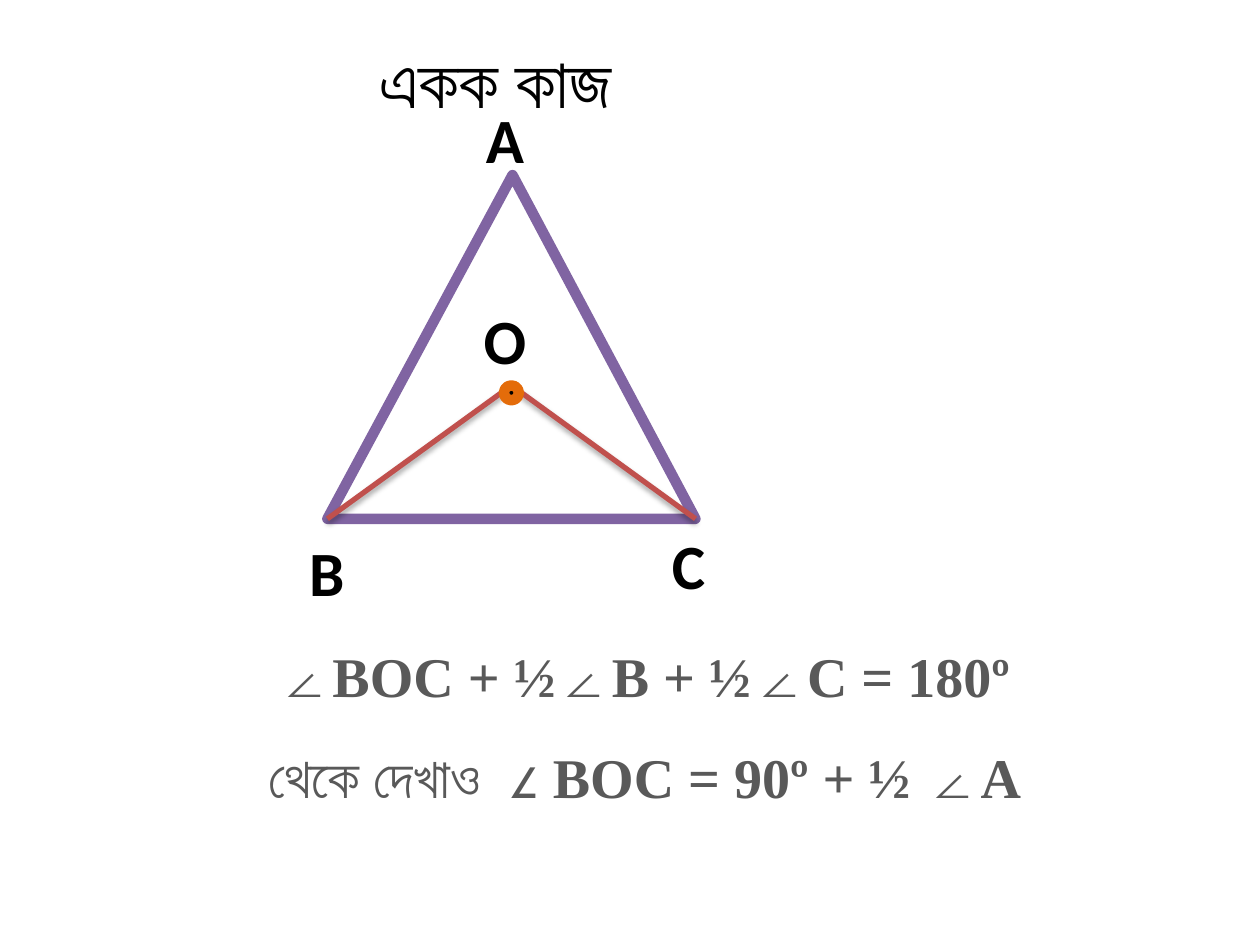
from lxml import etree
from pptx import Presentation
from pptx.dml.color import RGBColor
from pptx.enum.shapes import MSO_CONNECTOR, MSO_SHAPE
from pptx.enum.text import MSO_ANCHOR, MSO_AUTO_SIZE, PP_ALIGN
from pptx.oxml import parse_xml
from pptx.oxml.ns import nsdecls, qn
from pptx.util import Cm, Pt

COLORS = {"white": "FFFFFF", "black": "000000", "purple": "8064A2",
          "red": "C0504D", "orange": "E46C0A", "gray": "595959"}


def rgb(name):
    return RGBColor.from_string(COLORS[name])


def style_run(r, font, size, color, bold=False):
    r.font.name = font
    r.font.size = Pt(size)
    r.font.bold = bold
    r.font.color.rgb = rgb(color)
    # Bengali text takes the complex-script font
    cs = etree.SubElement(r.font._element, qn("a:cs"))
    cs.set("typeface", font)


prs = Presentation()
prs.slide_width, prs.slide_height = Cm(25.4), Cm(19.05)
s = prs.slides.add_slide(prs.slide_layouts[5])

# Triangle ABC and the point O inside it
left, top, width, height = 6.6, 3.53, 7.42, 6.93
right, bottom = left + width, top + height
ox, oy, dot = 10.31, 7.77, 0.3

triangle = s.shapes.add_shape(MSO_SHAPE.ISOSCELES_TRIANGLE,
                              Cm(left), Cm(top), Cm(width), Cm(height))
triangle.adjustments[0] = 0.503

# Lines from B and C to O
for x in (left, right):
    line = s.shapes.add_connector(MSO_CONNECTOR.STRAIGHT,
                                  Cm(x), Cm(bottom), Cm(ox), Cm(oy))
    line.line.color.rgb = rgb("red")
    line.line.width = Pt(3)
    line._element.spPr.append(parse_xml(
        f'<a:effectLst {nsdecls("a")}>'
        '<a:outerShdw blurRad="40000" dist="23000" dir="5400000" rotWithShape="0">'
        f'<a:srgbClr val="{COLORS["black"]}"><a:alpha val="35000"/></a:srgbClr>'
        '</a:outerShdw></a:effectLst>'))

point = s.shapes.add_shape(MSO_SHAPE.FLOWCHART_CONNECTOR,
                           Cm(ox - dot / 2), Cm(oy), Cm(dot), Cm(dot))
for sp, fill, outline in ((triangle, "white", "purple"), (point, "black", "orange")):
    sp.shadow.inherit = False
    sp.fill.solid()
    sp.fill.fore_color.rgb = rgb(fill)
    sp.line.color.rgb = rgb(outline)
    sp.line.width = Pt(6)

# Point labels
for letter, x, y in (("A", 9.58, 2.18), ("B", 5.99, 10.92),
                     ("C", 13.28, 10.77), ("O", 9.58, 6.25)):
    sp = s.shapes.add_textbox(Cm(x), Cm(y), Cm(1.2), Cm(1.2))
    if letter == "O":
        sp.fill.solid()
        sp.fill.fore_color.rgb = rgb("white")
    tf = sp.text_frame
    tf.margin_left = tf.margin_right = tf.margin_top = tf.margin_bottom = 0
    tf.vertical_anchor = MSO_ANCHOR.MIDDLE
    tf.text = letter
    p = tf.paragraphs[0]
    p.alignment = PP_ALIGN.CENTER
    style_run(p.runs[0], "Calibri", 36, "black", True)

# Title
title = s.shapes.title
title.left, title.top, title.width, title.height = Cm(4.24), Cm(0.64), Cm(11.86), Cm(1.96)
tf = title.text_frame
tf.auto_size = MSO_AUTO_SIZE.NONE
tf.vertical_anchor = MSO_ANCHOR.TOP
tf.text = "একক কাজ "
p = tf.paragraphs[0]
p.alignment = PP_ALIGN.CENTER
style_run(p.runs[0], "Lato", 40, "black")

# Equations
tf = s.shapes.add_textbox(Cm(1.9), Cm(12.14), Cm(22.43), Cm(5.13)).text_frame
tf.word_wrap = True
equations = [
    [("∠BOC + ½∠B + ½∠C = 180º ", "Times New Roman")],
    [("থেকে দেখাও  ", "Lato"), ("∠ BOC = 90º + ½ ∠A ", "Times New Roman")],
]
for i, parts in enumerate(equations):
    p = tf.add_paragraph() if i else tf.paragraphs[0]
    p.alignment = PP_ALIGN.CENTER
    p.line_spacing = 1.5
    pPr = p._p.get_or_add_pPr()
    pPr.set("marL", str(Cm(0.95)))
    pPr.set("indent", str(-Cm(0.95)))
    for text, font in parts:
        r = p.add_run()
        r.text = text
        style_run(r, font, 32, "gray", True)

prs.save("out.pptx")
